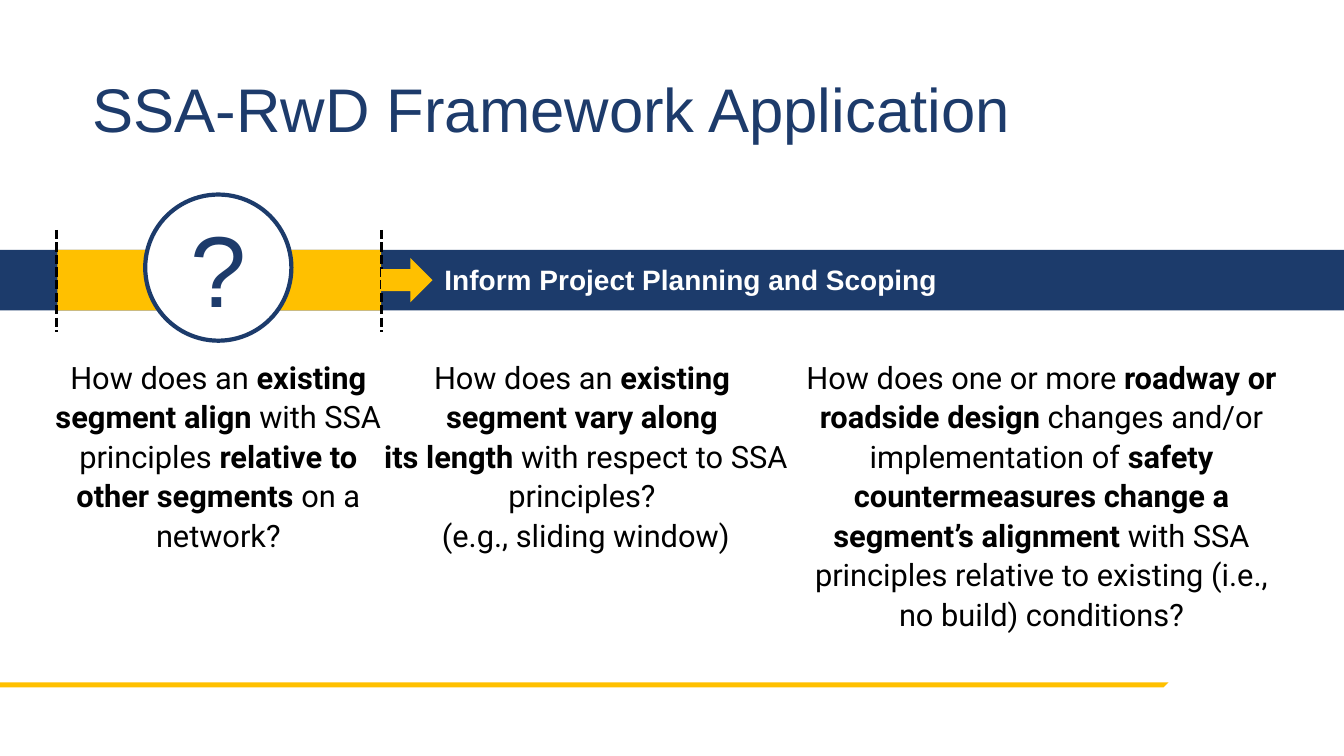
import pptx
import pptx.util
import pptx.dml.color
import pptx.enum.dml
import pptx.enum.shapes
import pptx.enum.text
import pptx.oxml
from pptx.util import Inches

NAVY = pptx.dml.color.RGBColor(0x1C, 0x3B, 0x6B)
TITLE_NAVY = pptx.dml.color.RGBColor(0x1D, 0x3B, 0x6B)
GOLD = pptx.dml.color.RGBColor(0xFF, 0xC0, 0x00)
BLACK = pptx.dml.color.RGBColor(0, 0, 0)
WHITE = pptx.dml.color.RGBColor(0xFF, 0xFF, 0xFF)
SHAPE = pptx.enum.shapes.MSO_SHAPE
ANCHOR = pptx.enum.text.MSO_ANCHOR
ALIGN = pptx.enum.text.PP_ALIGN

prs = pptx.Presentation()
prs.slide_width, prs.slide_height = Inches(13.33), Inches(7.5)
s = prs.slides.add_slide(prs.slide_layouts[6])


def add_shape(kind, left, top, width, height, fill):
    sp = s.shapes.add_shape(kind, Inches(left), Inches(top), Inches(width), Inches(height))
    sp.shadow.inherit = False
    sp.fill.solid()
    sp.fill.fore_color.rgb = fill
    sp.line.fill.background()
    return sp


def add_text(box, text, font, size, color, spacing=1.0, anchor=ANCHOR.TOP, align=ALIGN.LEFT):
    """Add a one-paragraph text box; parts between ** are bold, newlines are line breaks."""
    tf = s.shapes.add_textbox(*map(Inches, box)).text_frame
    tf.word_wrap = True
    tf.vertical_anchor = anchor
    p = tf.paragraphs[0]
    p.alignment = align
    p.line_spacing = spacing
    for i, part in enumerate(text.split("**")):
        for j, line in enumerate(part.split("\n")):
            if j:
                p.add_line_break()
            if line:
                r = p.add_run()
                r.text = line
                r.font.name = font
                r.font.size = pptx.util.Pt(size)
                r.font.bold = i % 2 == 1
                r.font.color.rgb = color


# Footer rule with a slanted end
builder = s.shapes.build_freeform(Inches(-0.01), Inches(6.82))
builder.add_line_segments(
    [(Inches(x), Inches(y)) for x, y in [(0, 6.77), (11.59, 6.77), (11.54, 6.82)]], close=True)
rule = builder.convert_to_shape()
rule.shadow.inherit = False
rule.fill.solid()
rule.fill.fore_color.rgb = GOLD
rule.line.fill.background()

add_text((0.82, 0.39, 11.5, 1.45), "SSA-RwD Framework Application",
         "Arial", 44, TITLE_NAVY, 0.9, ANCHOR.MIDDLE)

# Questions under the band
questions = [
    (7.78, 5.1, 3.8, "How does one or more **roadway or roadside design **changes and/or "
     "implementation of **safety countermeasures change a segment’s alignment** with SSA "
     "principles relative to existing (i.e., no build) conditions?"),
    (0.36, 3.61, 3.57, "How does an **existing segment align **with SSA principles "
     "**relative to other segments **on a network?"),
    (3.64, 4.34, 2.11, "How does an **existing \nsegment vary along \nits length **"
     "with respect to SSA principles? \n(e.g., sliding window)"),
]
for left, width, height, question in questions:
    add_text((left, 3.48, width, height), question, "Roboto", 22, BLACK, 1.07, align=ALIGN.CENTER)

# Band with the highlighted segment
add_shape(SHAPE.RECTANGLE, 0, 2.48, 13.33, 0.6, NAVY)
add_shape(SHAPE.RECTANGLE, 0.57, 2.48, 3.21, 0.6, GOLD)

for x in (0.56, 3.78):
    edge = s.shapes.add_connector(pptx.enum.shapes.MSO_CONNECTOR.STRAIGHT,
                                  Inches(x), Inches(2.28), Inches(x), Inches(3.29))
    edge.line.color.rgb = BLACK
    edge.line.width = pptx.util.Pt(2.25)
    edge.line.dash_style = pptx.enum.dml.MSO_LINE.SQUARE_DOT
    edge._element.spPr.append(pptx.oxml.parse_xml(
        '<a:effectLst xmlns:a="http://schemas.openxmlformats.org/drawingml/2006/main"/>'))

circle = add_shape(SHAPE.OVAL, 1.44, 1.93, 1.45, 1.45, WHITE)
circle.line.color.rgb = NAVY
circle.line.width = pptx.util.Pt(3)

add_text((4.31, 2.56, 8.48, 0.44), "**Inform Project Planning and Scoping**", "Arial", 20, WHITE)
add_shape(SHAPE.RIGHT_ARROW, 3.78, 2.56, 0.51, 0.44, GOLD)
add_text((1.79, 2, 1.04, 1.45), "?", "Arial", 72, TITLE_NAVY, 0.9, ANCHOR.MIDDLE)

prs.save("out.pptx")
